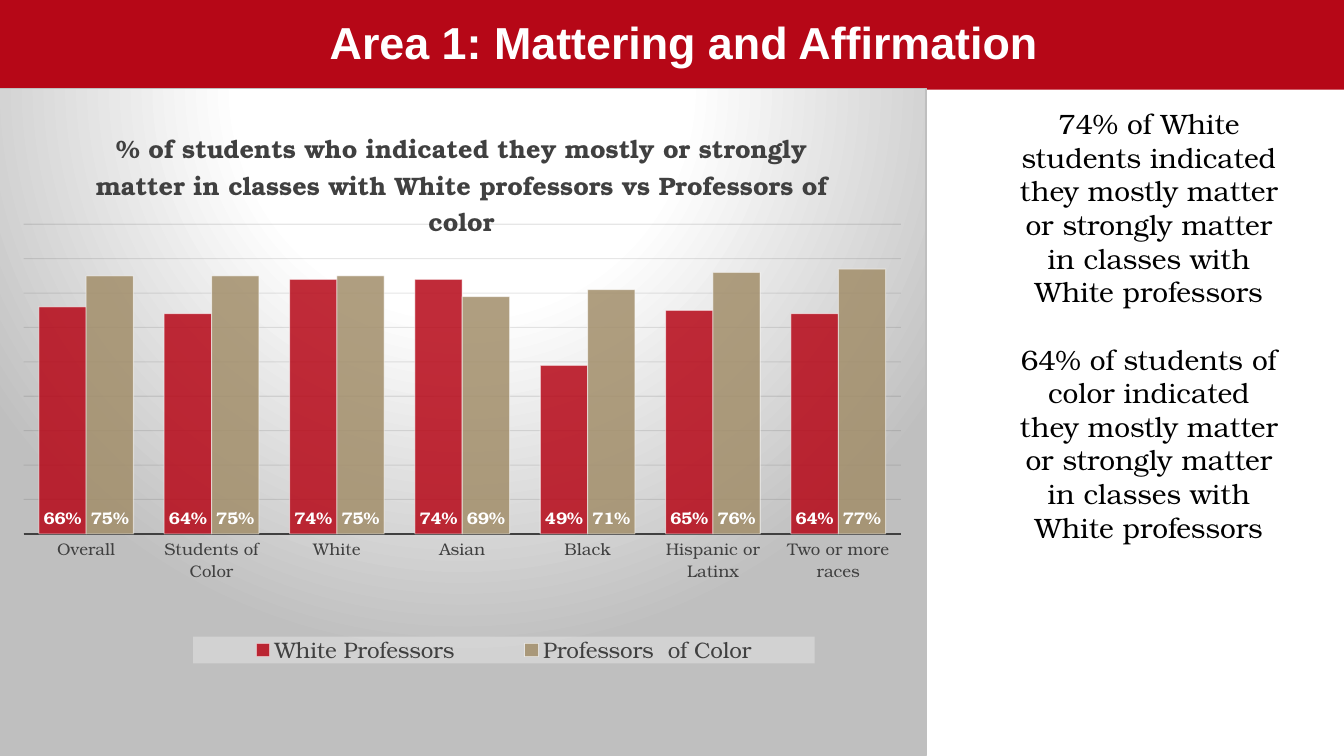
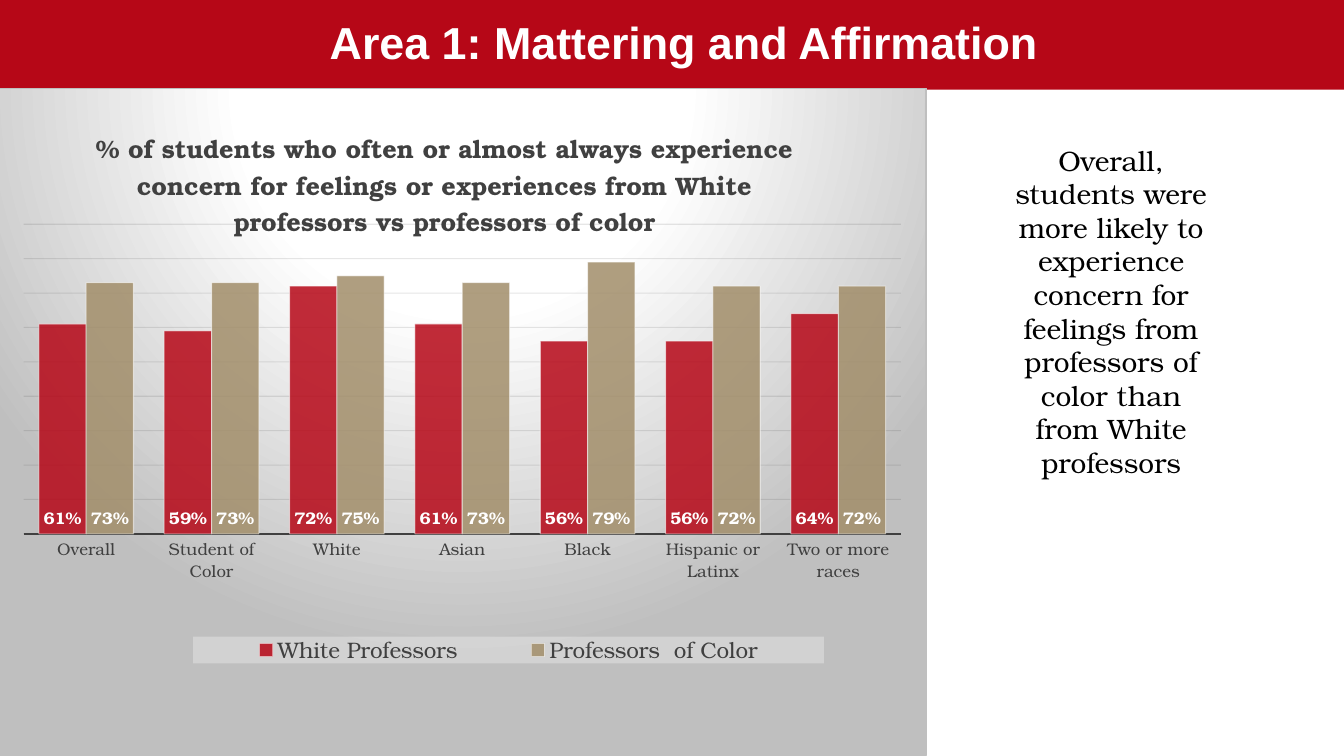
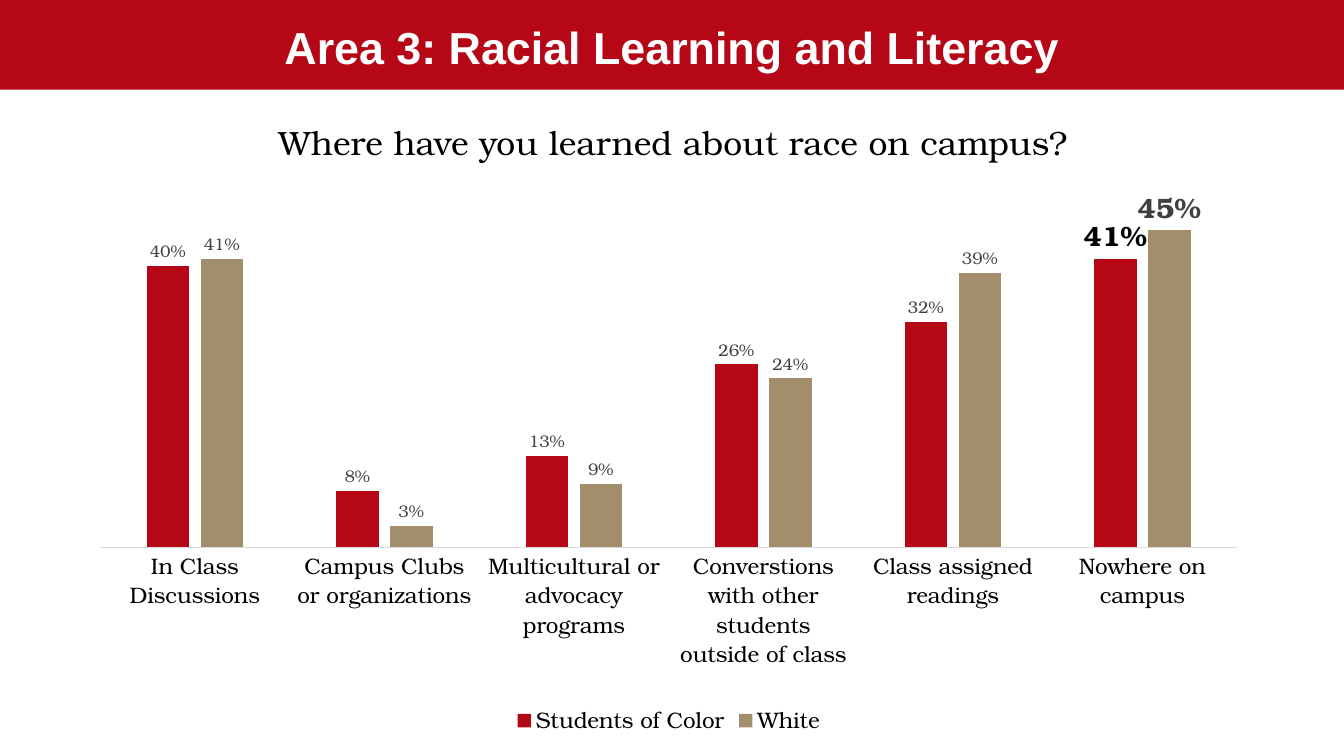
from dataclasses import dataclass

from lxml import etree
from pptx import Presentation
from pptx.chart.data import CategoryChartData
from pptx.dml.color import RGBColor
from pptx.enum.chart import XL_CHART_TYPE, XL_LABEL_POSITION, XL_LEGEND_POSITION, XL_TICK_MARK
from pptx.enum.shapes import MSO_SHAPE
from pptx.enum.text import MSO_ANCHOR, MSO_AUTO_SIZE, PP_ALIGN
from pptx.oxml import parse_xml
from pptx.oxml.ns import nsdecls, qn
from pptx.util import Inches, Pt

COLUMNS = XL_CHART_TYPE.COLUMN_CLUSTERED
INSIDE_BASE, OUTSIDE_END = XL_LABEL_POSITION.INSIDE_BASE, XL_LABEL_POSITION.OUTSIDE_END
LEGEND_BOTTOM = XL_LEGEND_POSITION.BOTTOM
NO_TICK = XL_TICK_MARK.NONE
RECT = MSO_SHAPE.RECTANGLE
TOP, MIDDLE = MSO_ANCHOR.TOP, MSO_ANCHOR.MIDDLE
NO_FIT = MSO_AUTO_SIZE.NONE
LEFT, CENTER = PP_ALIGN.LEFT, PP_ALIGN.CENTER


@dataclass(frozen=True)
class Theme:
    """Colours, fonts and type sizes of the deck."""
    red: str = "B60717"
    tan: str = "A28E6A"
    white: str = "FFFFFF"
    black: str = "000000"
    grey: str = "404040"
    silver: str = "BFBFBF"
    rule: str = "D9D9D9"
    grid: str = "0D0D0D"
    legend: str = "F2F2F2"
    head_font: str = "Arial"
    body_font: str = "TeX Gyre Bonum"
    title: int = 32
    heading: int = 24
    body: int = 20
    chart_title: int = 18
    large: int = 16
    small: int = 12


@dataclass(frozen=True)
class Box:
    """A region in columns and rows of a 160 by 90 grid."""
    x: float
    y: float
    w: float
    h: float

    def emu(self):
        """Return left, top, width and height as lengths."""
        return [Inches(v / 12) for v in (self.x, self.y, self.w, self.h)]


T = Theme()
BAND = Box(0, -0.24, 160, 10.92)
HIGH_TITLE = Box(30.6, 1.8, 101.64, 9.36)
BAND_TITLE = Box(0, 0.12, 160, 10.92)
LEFT_CHART = Box(-0.24, 10.44, 110.52, 79.56)
WIDE_CHART = Box(10.1, 16.92, 138.96, 71.16)
QUESTION = Box(32, 13.92, 114, 6)

PROFESSORS = ["White Professors", "Professors  of Color"]
GROUPS = ["White", "Asian", "Black", "Hispanic or Latinx", "Two or more races"]
PROFESSOR_SLIDES = [
    dict(question="% of students who indicated they mostly or strongly matter in classes "
                  "with White professors vs Professors of color",
         cats=["Overall", "Students of Color"] + GROUPS,
         values=[[.66, .64, .74, .74, .49, .65, .64], [.75, .75, .75, .69, .71, .76, .77]],
         legend_width=0.67,
         note_box=Box(119.64, 12.12, 34.2, 53.76),
         notes=["74% of White students indicated they mostly matter or strongly matter "
                "in classes with White professors",
                "64% of students of color indicated they mostly matter or strongly matter "
                "in classes with White professors"]),
    dict(question="% of students who often or almost always experience concern for feelings "
                  "or experiences from White professors vs professors of color",
         cats=["Overall", "Student of Color"] + GROUPS,
         values=[[.61, .59, .72, .61, .56, .56, .64], [.73, .73, .75, .73, .79, .72, .72]],
         legend_width=0.68,
         note_box=Box(119.64, 16.44, 25.2, 41.64),
         notes=["Overall, students were more likely to experience concern for feelings "
                "from professors of color than from White professors"]),
]
PLACES = ["In Class Discussions", "Campus Clubs or organizations",
          "Multicultural or advocacy programs",
          "Converstions with other students outside of class",
          "Class assigned readings", "Nowhere on campus"]
LEARNERS = ["Students of Color", "White"]
LEARNED = [[.40, .08, .13, .26, .32, .41], [.41, .03, .09, .24, .39, .45]]


def rgb(color):
    """Turn a hex string into a colour."""
    return RGBColor.from_string(color)


def set_font(font, size, color, name=T.body_font, bold=False):
    """Give a font its face, size and colour."""
    font.name, font.size, font.bold = name, Pt(size), bold
    font.color.rgb = rgb(color)


def set_line(line, color, width):
    """Give a line its colour and width."""
    line.color.rgb = rgb(color)
    line.width = Pt(width)


def fade(element, percent):
    """Set the opacity of the solid fill directly inside an element."""
    color = element.find(qn("a:solidFill")).find(qn("a:srgbClr"))
    etree.SubElement(color, qn("a:alpha")).set("val", str(percent * 1000))


def place(part, inner=False, **shares):
    """Lay out a chart part by shares of the chart's size."""
    old = part.find(qn("c:layout"))
    if old is not None:
        part.remove(old)
    layout = etree.Element(qn("c:layout"))
    manual = etree.SubElement(layout, qn("c:manualLayout"))
    settings = [("layoutTarget", "inner")] if inner else []
    settings += [("xMode", "edge"), ("yMode", "edge")]
    settings += [(key, str(share)) for key, share in shares.items()]
    for key, value in settings:
        etree.SubElement(manual, qn("c:" + key)).set("val", value)
    overlay = part.find(qn("c:overlay"))
    if overlay is None:
        part.insert(0, layout)
    else:
        overlay.addprevious(layout)


def add_frame(chart, fill, line):
    """Give the whole chart area a fill and a border."""
    frame = parse_xml(f'<c:spPr {nsdecls("c", "a")}>{fill}<a:ln w="9525">{line}</a:ln></c:spPr>')
    chart._chartSpace.find(qn("c:chart")).addnext(frame)


def add_title(slide, box, text, anchor):
    """Put the red band behind the slide's title."""
    band = slide.shapes.add_shape(RECT, *BAND.emu())
    band.shadow.inherit = False
    band.fill.solid()
    band.fill.fore_color.rgb = rgb(T.red)
    band.line.fill.background()
    slide.shapes._spTree.insert(2, band._element)
    title = slide.shapes.title
    title.left, title.top, title.width, title.height = box.emu()
    tf = title.text_frame
    tf.margin_left = tf.margin_right = tf.margin_top = tf.margin_bottom = 0
    tf.word_wrap, tf.auto_size, tf.vertical_anchor = True, NO_FIT, anchor
    p = tf.paragraphs[0]
    p.alignment = CENTER
    r = p.add_run()
    r.text = text
    set_font(r.font, T.title, T.white, T.head_font, True)


def add_text(slide, box, texts, size, align):
    """Add a text box whose paragraphs are one line apart."""
    tf = slide.shapes.add_textbox(*box.emu()).text_frame
    tf.word_wrap = True
    for i, text in enumerate(texts):
        p = tf.add_paragraph() if i else tf.paragraphs[0]
        p.alignment = align
        if i:
            p.space_before = Pt(size * 1.2)
        r = p.add_run()
        r.text = text
        set_font(r.font, size, T.black)


def add_columns(slide, box, cats, names, values, top, text_color, label_size):
    """Add a clustered column chart in red and tan with a legend below."""
    data = CategoryChartData(number_format="0%")
    data.categories = cats
    for name, row in zip(names, values):
        data.add_series(name, row)
    chart = slide.shapes.add_chart(COLUMNS, *box.emu(), data).chart
    set_font(chart.font, 10, T.black)
    chart.has_title = False
    chart.has_legend = True
    chart.legend.position = LEGEND_BOTTOM
    chart.legend.include_in_layout = False
    set_font(chart.legend.font, T.large, text_color)
    axis = chart.value_axis
    axis.visible = axis.has_major_gridlines = False
    axis.minimum_scale, axis.maximum_scale, axis.major_unit = 0, top, 0.1
    axis = chart.category_axis
    axis.major_tick_mark = axis.minor_tick_mark = NO_TICK
    set_font(axis.tick_labels.font, label_size, text_color)
    plot = chart.plots[0]
    plot.vary_by_categories = False
    for series, color in zip(plot.series, (T.red, T.tan)):
        series.format.fill.solid()
        series.format.fill.fore_color.rgb = rgb(color)
    return chart


def label_series(series, position, color, bold):
    """Show the values of a series as percentages."""
    labels = series.data_labels
    labels.show_value = True
    labels.number_format, labels.number_format_is_linked = "0%", False
    labels.position = position
    set_font(labels.font, T.small, color, bold=bold)


def add_professor_chart(slide, box, question, cats, values, legend_width):
    """Add the shaded chart that compares two groups of professors."""
    chart = add_columns(slide, box, cats, PROFESSORS, values, 0.9, T.grey, T.small)
    stops = "".join(f'<a:gs pos="{pos}000"><a:srgbClr val="{color}"/></a:gs>'
                    for pos, color in ((0, T.white), (39, T.white), (100, T.silver)))
    add_frame(chart,
              f'<a:gradFill><a:gsLst>{stops}</a:gsLst><a:path path="circle">'
              '<a:fillToRect l="50000" t="-80000" r="50000" b="180000"/></a:path></a:gradFill>',
              f'<a:solidFill><a:srgbClr val="{T.silver}"/></a:solidFill>')
    chart.has_title = True
    r = chart.chart_title.text_frame.paragraphs[0].add_run()
    r.text = question
    set_font(r.font, T.chart_title, T.grey, bold=True)
    place(chart.chart_title._element, x=0.1, y=0.05)

    axis = chart.value_axis
    axis.has_major_gridlines = True
    grid = axis.major_gridlines.format.line
    set_line(grid, T.grid, 0.75)
    fade(axis.major_gridlines._xAx.find(qn("c:majorGridlines")).find(qn("c:spPr")).find(qn("a:ln")), 10)
    set_line(chart.category_axis.format.line, T.grey, 1.5)

    plot = chart.plots[0]
    plot.gap_width = 65
    for series in plot.series:
        set_line(series.format.line, T.white, 0.75)
        look = series._element.find(qn("c:spPr"))
        fade(look, 85)
        fade(look.find(qn("a:ln")), 50)
        label_series(series, INSIDE_BASE, T.white, True)

    legend = chart.legend._element
    place(legend, x=0.21, y=0.82, w=legend_width, h=0.04)
    panel = parse_xml(f'<c:spPr {nsdecls("c", "a")}><a:solidFill><a:srgbClr val="{T.legend}"/>'
                      '</a:solidFill><a:ln><a:noFill/></a:ln></c:spPr>')
    fade(panel, 39)
    legend.find(qn("c:overlay")).addnext(panel)
    place(chart._chartSpace.find(qn("c:chart")).find(qn("c:plotArea")), True,
          x=0.027, y=0.204, w=0.946, h=0.464)


def add_learning_chart(slide, box):
    """Add the chart of places of learning, with its last pair stressed."""
    chart = add_columns(slide, box, PLACES, LEARNERS, LEARNED, 0.5, T.black, T.large)
    add_frame(chart, "<a:noFill/>", "<a:noFill/>")
    set_line(chart.category_axis.format.line, T.rule, 0.75)
    plot = chart.plots[0]
    plot.gap_width, plot.overlap = 219, -27
    for series, color in zip(plot.series, (T.black, T.grey)):
        label_series(series, OUTSIDE_END, T.grey, False)
        label = series.points[len(PLACES) - 1].data_label
        set_font(label.font, T.body, color, bold=True)
        label.position = OUTSIDE_END
    place(chart._chartSpace.find(qn("c:chart")).find(qn("c:plotArea")), True,
          x=0.013, y=0.089, w=0.974, h=0.589)


def professor_slide(slide, note_box, notes, **chart):
    """Build a slide with a chart on the left and notes on the right."""
    add_title(slide, HIGH_TITLE, "Area 1: Mattering and Affirmation", TOP)
    add_professor_chart(slide, LEFT_CHART, **chart)
    add_text(slide, note_box, notes, T.body, CENTER)


def learning_slide(slide):
    """Build the slide with a question above a wide chart."""
    add_title(slide, BAND_TITLE, "Area 3: Racial Learning and Literacy", MIDDLE)
    add_text(slide, QUESTION, ["Where have you learned about race on campus?"], T.heading, LEFT)
    add_learning_chart(slide, WIDE_CHART)


def main():
    """Build and save the deck."""
    prs = Presentation()
    prs.slide_width, prs.slide_height = Inches(13.33), Inches(7.5)
    title_only = prs.slide_layouts[5]
    for content in PROFESSOR_SLIDES:
        professor_slide(prs.slides.add_slide(title_only), **content)
    learning_slide(prs.slides.add_slide(title_only))
    prs.save("out.pptx")


if __name__ == "__main__":
    main()
